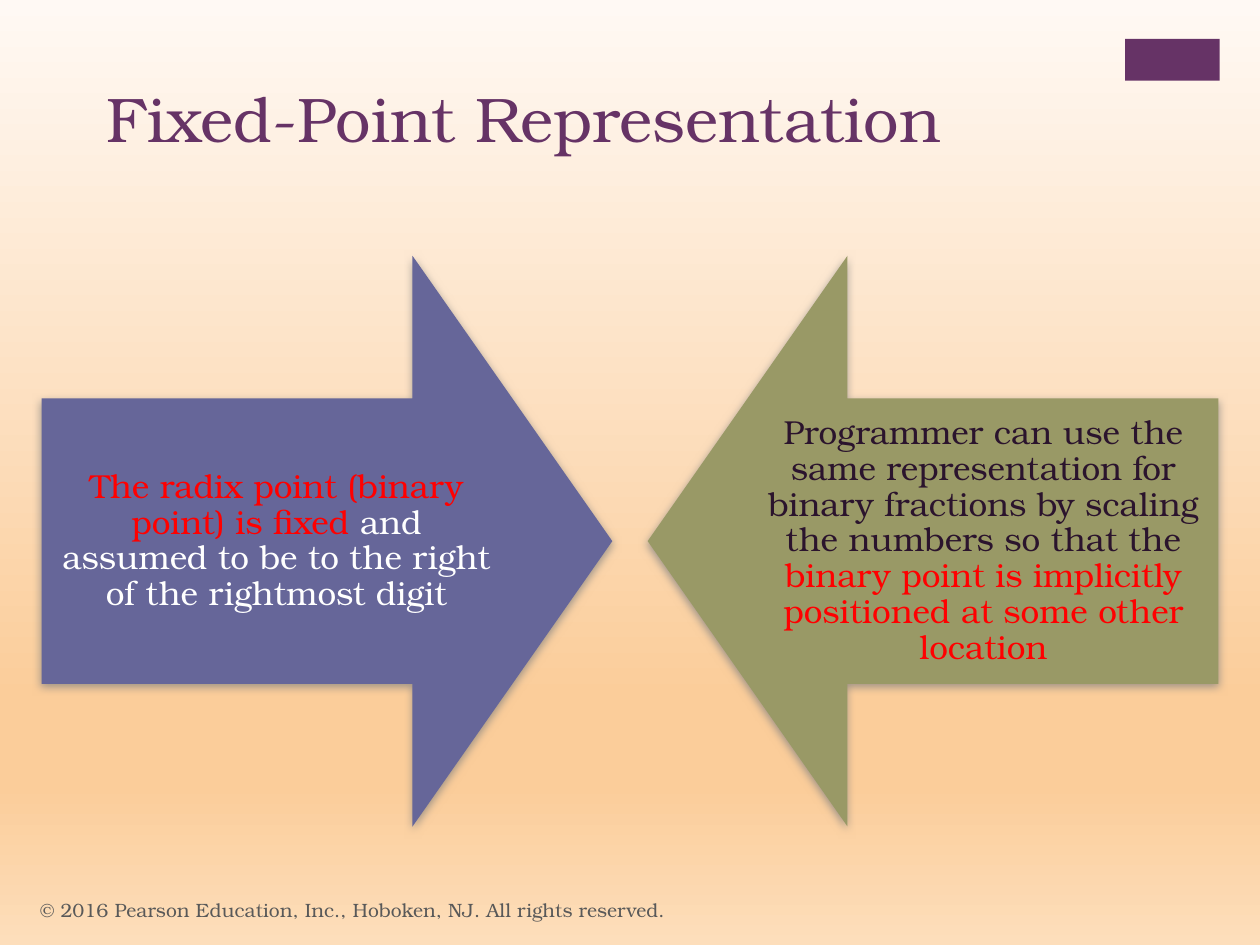
from dataclasses import dataclass

from lxml.etree import SubElement
from pptx import Presentation
from pptx.dml.color import RGBColor
from pptx.enum.shapes import MSO_SHAPE as Preset
from pptx.enum.text import MSO_ANCHOR as Anchor, PP_ALIGN as Align
from pptx.oxml.ns import qn
from pptx.util import Emu, Inches, Pt

COLUMNS, ROWS = 100, 75
CELL = Inches(0.1)
FONT = "TeX Gyre Bonum"
PLUM, RED, WHITE = "663366", "FF0000", "FFFFFF"
SKY = [(0, "FFF9F4"), (74, "FBCD9A"), (83, "FBCD9A"), (100, "FDDEBB")]
ARROW_SIDE, ARROW_TOP, MARGIN = 45.3, 20.3, 3.3
LABEL_WIDTH = 37.3


@dataclass(frozen=True)
class Area:
    left: float
    top: float
    width: float
    height: float

    def emu(self) -> list[Emu]:
        return [Emu(round(v * CELL)) for v in (self.left, self.top, self.width, self.height)]


@dataclass(frozen=True)
class Statement:
    arrow_left: float
    label_left: float
    rotation: int
    fill: str
    runs: tuple[tuple[str, str], ...]


STATEMENTS = [
    Statement(MARGIN, MARGIN, 270, "666699", (
        ("The radix point (binary point) is fixed ", RED),
        ("and assumed to be to the right of the rightmost digit", WHITE))),
    Statement(COLUMNS - MARGIN - ARROW_SIDE, COLUMNS - MARGIN - LABEL_WIDTH, 90, "999966", (
        ("Programmer can use the same representation for binary fractions "
         "by scaling the numbers so that the ", "2B142D"),
        ("binary point is implicitly positioned at some other location", RED))),
]


def rgb(value: str) -> RGBColor:
    return RGBColor.from_string(value)


def apply(target, values: dict) -> None:
    for key, value in values.items():
        setattr(target, key, value)


def paint_background(slide) -> None:
    fill = slide.background.fill
    fill.gradient()
    fill.gradient_angle = 270
    stops = slide.background._cSld.find(".//" + qn("a:gsLst"))
    for stop in list(stops):
        stops.remove(stop)
    for position, color in SKY:
        stop = SubElement(stops, qn("a:gs"), pos=str(position * 1000))
        SubElement(stop, qn("a:srgbClr"), val=color)


def add_block(slide, preset: Preset, area: Area, color: str):
    block = slide.shapes.add_shape(preset, *area.emu())
    block.shadow.inherit = False
    block.fill.solid()
    block.fill.fore_color.rgb = rgb(color)
    block.line.fill.background()
    return block


def add_soft_shadow(block) -> None:
    effects = block._element.spPr.find(qn("a:effectLst"))
    shadow = SubElement(effects, qn("a:outerShdw"), blurRad=str(Pt(5)), dist=str(Pt(2)),
                        dir="5400000", rotWithShape="0")
    tint = SubElement(shadow, qn("a:srgbClr"), val="808080")
    SubElement(tint, qn("a:alpha"), val="75000")


def add_words(slide, area: Area, runs, size: int, frame_format: dict, line_format: dict) -> None:
    frame = slide.shapes.add_textbox(*area.emu()).text_frame
    apply(frame, {"word_wrap": True, **frame_format})
    line = frame.paragraphs[0]
    apply(line, line_format)
    for words, color in runs:
        run = line.add_run()
        run.text = words
        apply(run.font, {"name": FONT, "size": Pt(size)})
        run.font.color.rgb = rgb(color)


def add_statement(slide, statement: Statement) -> None:
    arrow = add_block(slide, Preset.DOWN_ARROW,
                      Area(statement.arrow_left, ARROW_TOP, ARROW_SIDE, ARROW_SIDE), statement.fill)
    arrow.adjustments[0], arrow.adjustments[1] = 0.5, 0.35
    arrow.rotation = statement.rotation
    add_soft_shadow(arrow)
    sides = ("left", "top", "right", "bottom")
    add_words(slide,
              Area(statement.label_left, ARROW_TOP + ARROW_SIDE / 4, LABEL_WIDTH, ARROW_SIDE / 2),
              statement.runs, 19,
              {"vertical_anchor": Anchor.MIDDLE, **{f"margin_{s}": Inches(0.15) for s in sides}},
              {"alignment": Align.CENTER, "line_spacing": 0.9})


def main() -> None:
    deck = Presentation()
    apply(deck, {"slide_width": COLUMNS * CELL, "slide_height": ROWS * CELL})
    slide = deck.slides.add_slide(deck.slide_layouts[6])
    paint_background(slide)
    add_block(slide, Preset.RECTANGLE, Area(89.3, 3.1, 7.5, 3.3), PLUM)
    add_words(slide, Area(7.5, 5.8, 82.6, 12.2), [("Fixed-Point Representation", PLUM)], 36,
              {"vertical_anchor": Anchor.TOP}, {})
    for statement in STATEMENTS:
        add_statement(slide, statement)
    add_words(slide, Area(2.2, 70.2, 67, 4),
              [("© 2016 Pearson Education, Inc., Hoboken, NJ. All rights reserved.", "595959")], 11,
              {"vertical_anchor": Anchor.MIDDLE}, {})
    deck.save("out.pptx")


if __name__ == "__main__":
    main()
